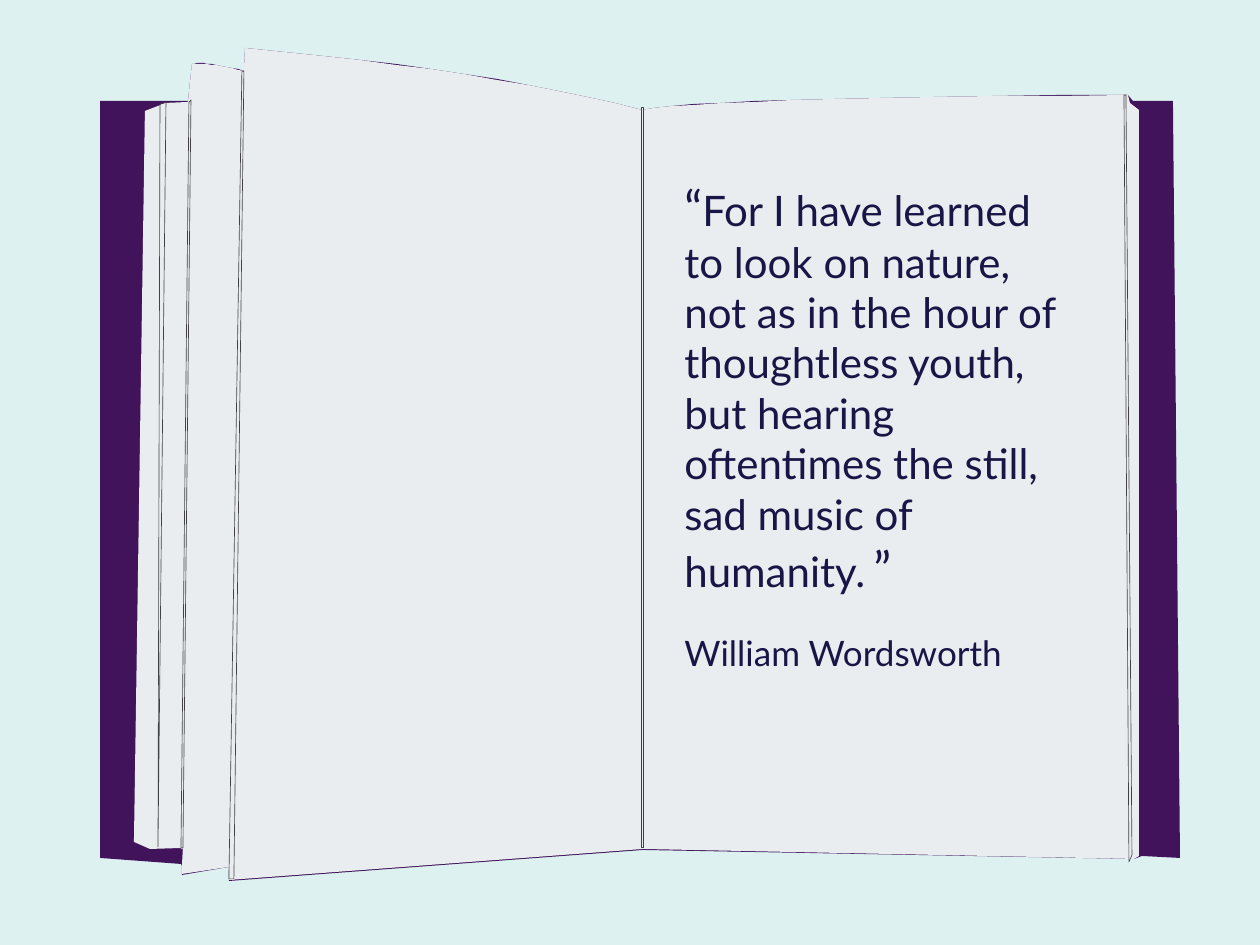
import pptx
import pptx.util
import pptx.dml.color
import pptx.enum.shapes
import pptx.enum.text

PX = 914400 / 126
PAGE_WIDTH, PAGE_HEIGHT = 1260, 945
COLORS = {"backdrop": "DDF1F0", "cover": "40135B", "paper": "E9EDEF",
          "crease": "414042", "ink": "171646"}
FONT = "Lato"
CURVE_STEPS = 12

LEAF_START, LEAF_END = (92, 16), (144, 23)
PAGE_CORNER = (145, 0)
SPINE_TOP = (542, 62)
SPINE_LEFT, SPINE_WIDTH, SPINE_HEIGHT = 542, 2, 740
RIGHT_CORNER = (1028, 47)

FOLDS = {
    "left leaf": [(144, 24), (142, 25), (129, 832), (134, 832)],
    "inner leaf": [(60, 57), (58, 800), (58, 799), (66, 55)],
    "right edge": [(1026, 48), (1024, 48), (1029, 815), (1032, 808)],
    "stack edge": [(91, 53), (89, 55), (81, 801), (83, 801)],
}


def emu(px):
    return pptx.util.Emu(round(px * PX))


def color(name):
    return pptx.dml.color.RGBColor.from_string(COLORS[name])


def paint(shape, fill=None, line=None):
    shape.shadow.inherit = False
    if fill:
        shape.fill.solid()
        shape.fill.fore_color.rgb = color(fill)
    else:
        shape.fill.background()
    if line:
        shape.line.color.rgb = color(line)
        shape.line.width = pptx.util.Pt(0.38)
    else:
        shape.line.fill.background()


def add_rectangle(slide, left, top, width, height, fill=None, line=None):
    rectangle = slide.shapes.add_shape(
        pptx.enum.shapes.MSO_SHAPE.RECTANGLE,
        emu(left), emu(top), emu(width), emu(height))
    paint(rectangle, fill, line)


def add_outline(slide, left, top, points, fill=None, line=None):
    builder = slide.shapes.build_freeform(*points[0], scale=PX)
    builder.add_line_segments(points[1:], close=True)
    paint(builder.convert_to_shape(emu(left), emu(top)), fill, line)


def curve(start, bend, end):
    def blend(t, a, b, c):
        return round((1 - t) ** 2 * a + 2 * t * (1 - t) * b + t ** 2 * c)

    steps = [step / CURVE_STEPS for step in range(CURVE_STEPS + 1)]
    return [tuple(blend(t, *axis) for axis in zip(start, bend, end))
            for t in steps]


def top_edge(inset):
    back_leaf = curve(LEAF_START, (105, 13 + inset), LEAF_END)
    left_page = curve(PAGE_CORNER, (385, 21 + inset), SPINE_TOP)
    right_page = curve(SPINE_TOP, (600, 49 + inset), RIGHT_CORNER)
    return back_leaf + left_page + right_page[1:]


def bottom_edge(inset):
    right_corner, spine = (1034, 811), (543, 802 - inset)
    page_corner, page_notch = (129, 833 - inset), (129, 819)
    leaf_corner, leaf_notch = (82, 827 - inset), (82, 818)
    return [right_corner, spine, page_corner, page_notch,
            leaf_corner, leaf_notch]


def add_cover(slide, left, top):
    right_board = [(1033, 53), (1073, 53), (1080, 810), (1042, 808)]
    left_board = [(81, 816), (0, 810), (0, 53), (88, 53)]
    outline = top_edge(0) + right_board + bottom_edge(0) + left_board
    add_outline(slide, left, top, outline, fill="cover")


def add_pages(slide, left, top):
    right_side = [(1030, 55), (1039, 62), (1039, 808)]
    left_side = [(83, 800), (50, 801), (34, 794), (45, 63), (66, 55), (88, 54)]
    outline = top_edge(1) + right_side + bottom_edge(1) + left_side
    add_outline(slide, left, top, outline, fill="paper")


def add_folds(slide, left, top):
    for fold in FOLDS.values():
        add_outline(slide, left, top, fold, fill="paper")
        add_outline(slide, left, top - 1, fold, line="crease")


def add_spine(slide, left, top):
    size = (SPINE_WIDTH, SPINE_HEIGHT)
    add_rectangle(slide, left, top, *size, fill="paper")
    add_rectangle(slide, left - 1, top - 1, *size, line="crease")


def add_book(slide, left, top):
    add_cover(slide, left, top)
    add_pages(slide, left, top)
    add_folds(slide, left, top)
    add_spine(slide, left + SPINE_LEFT, top + 60)


def add_words(paragraph, words, size):
    run = paragraph.add_run()
    run.text = words
    run.font.name = FONT
    run.font.size = pptx.util.Pt(size)
    run.font.color.rgb = color("ink")


def add_quotation(slide, left, top, width, height):
    quotation = slide.shapes.add_textbox(
        emu(left), emu(top), emu(width), emu(height)).text_frame
    quotation.word_wrap = True
    quotation.auto_size = pptx.enum.text.MSO_AUTO_SIZE.SHAPE_TO_FIT_TEXT
    verse = quotation.paragraphs[0]
    sentence = ("For I have learned to look on nature, not as in the hour of "
                "thoughtless youth, but hearing oftentimes the still, "
                "sad music of humanity.")
    for words, size in [("“", 28), (sentence, 24), (" ", 18), ("”", 28)]:
        add_words(verse, words, size)
    poet = quotation.add_paragraph()
    poet.space_before = pptx.util.Pt(19.5)
    add_words(poet, "William Wordsworth", 20)


def main():
    presentation = pptx.Presentation()
    presentation.slide_width = emu(PAGE_WIDTH)
    presentation.slide_height = emu(PAGE_HEIGHT)
    slide = presentation.slides.add_slide(presentation.slide_layouts[6])
    add_rectangle(slide, 0, 0, PAGE_WIDTH, PAGE_HEIGHT + 1, fill="backdrop")
    add_book(slide, 100, 48)
    add_quotation(slide, 672, 171, 416, 508)
    presentation.save("out.pptx")


if __name__ == "__main__":
    main()
